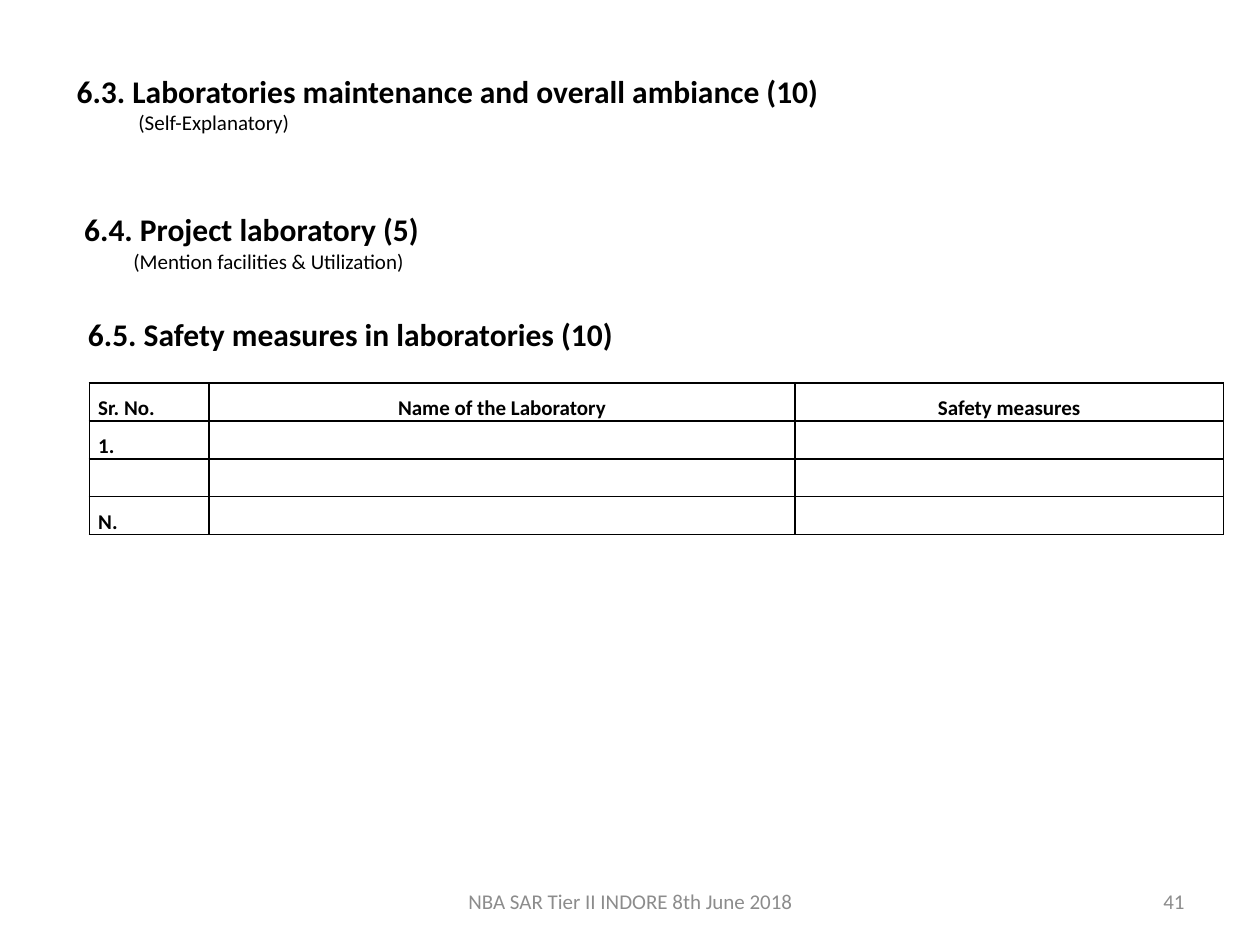
from pptx import Presentation
from pptx.dml.color import RGBColor
from pptx.enum.text import MSO_ANCHOR, PP_ALIGN
from pptx.oxml import parse_xml
from pptx.oxml.ns import nsdecls
from pptx.util import Inches, Pt

BLACK = RGBColor(0x00, 0x00, 0x00)
GRAY = RGBColor(0x8C, 0x8C, 0x8C)
LEFT, CENTER, RIGHT = PP_ALIGN.LEFT, PP_ALIGN.CENTER, PP_ALIGN.RIGHT
MIDDLE = MSO_ANCHOR.MIDDLE

prs = Presentation()
prs.slide_width, prs.slide_height = Inches(10), Inches(7.5)
s = prs.slides.add_slide(prs.slide_layouts[6])


def write(p, text, size=12, color=BLACK, bold=False, align=LEFT, indent=0):
    p.alignment = align
    if indent:
        p._p.get_or_add_pPr().set("marL", str(Inches(indent)))
    r = p.add_run()
    r.text = text
    r.font.name, r.font.size, r.font.bold = "Calibri", Pt(size), bold
    r.font.color.rgb = color


# Section headings with their notes
headings = [
    (0.51, 0.52, 9.21, 0.61, "6.3. Laboratories maintenance and overall ambiance (10)",
     "(Self-Explanatory)", 0.49),
    (0.57, 1.62, 5, 0.61, "6.4. Project laboratory (5)",
     "(Mention facilities & Utilization)", 0.39),
    (0.6, 2.45, 5, 0.4, "6.5. Safety measures in laboratories (10)", None, 0),
]
for x, y, w, h, title, note, indent in headings:
    tf = s.shapes.add_textbox(Inches(x), Inches(y), Inches(w), Inches(h)).text_frame
    tf.word_wrap = True
    write(tf.paragraphs[0], title, size=18, bold=True)
    if note:
        write(tf.add_paragraph(), note, indent=indent)

# Safety measures table
rows = [
    ["Sr. No.", "Name of the Laboratory", "Safety measures"],
    ["1.", "", ""],
    ["", "", ""],
    ["N.", "", ""],
]
widths = [0.95, 4.65, 3.4]
row_height = 0.3
table = s.shapes.add_table(len(rows), len(widths), Inches(0.71), Inches(3.04),
                           Inches(sum(widths)), Inches(row_height * len(rows))).table
table.first_row = table.horz_banding = False
for col, width in zip(table.columns, widths):
    col.width = Inches(width)
for i, row in enumerate(rows):
    table.rows[i].height = Inches(row_height)
    for j, text in enumerate(row):
        cell = table.cell(i, j)
        cell.margin_left = cell.margin_right = Inches(0.07)
        cell.margin_top = cell.margin_bottom = 0
        p = cell.text_frame.paragraphs[0]
        if text:
            p.line_spacing, p.space_before = 1.5, Pt(6)
            write(p, text, bold=True, align=CENTER if j else LEFT)
        else:
            p._p.get_or_add_endParaRPr().set("sz", "1200")
        # Borders come before the fill in the cell properties
        tcPr = cell._tc.get_or_add_tcPr()
        for side in ("lnL", "lnR", "lnT", "lnB"):
            tcPr.append(parse_xml(
                f'<a:{side} {nsdecls("a")} w="12700"><a:solidFill>'
                f'<a:srgbClr val="{BLACK}"/></a:solidFill></a:{side}>'))
        cell.fill.background()

# Footer and slide number
for x, w, text, align in [
    (3.42, 3.17, "NBA SAR Tier II INDORE 8th June 2018", CENTER),
    (7.17, 2.33, "41", RIGHT),
]:
    tf = s.shapes.add_textbox(Inches(x), Inches(6.95), Inches(w), Inches(0.4)).text_frame
    tf.word_wrap = True
    tf.vertical_anchor = MIDDLE
    write(tf.paragraphs[0], text, color=GRAY, align=align)

prs.save("out.pptx")
